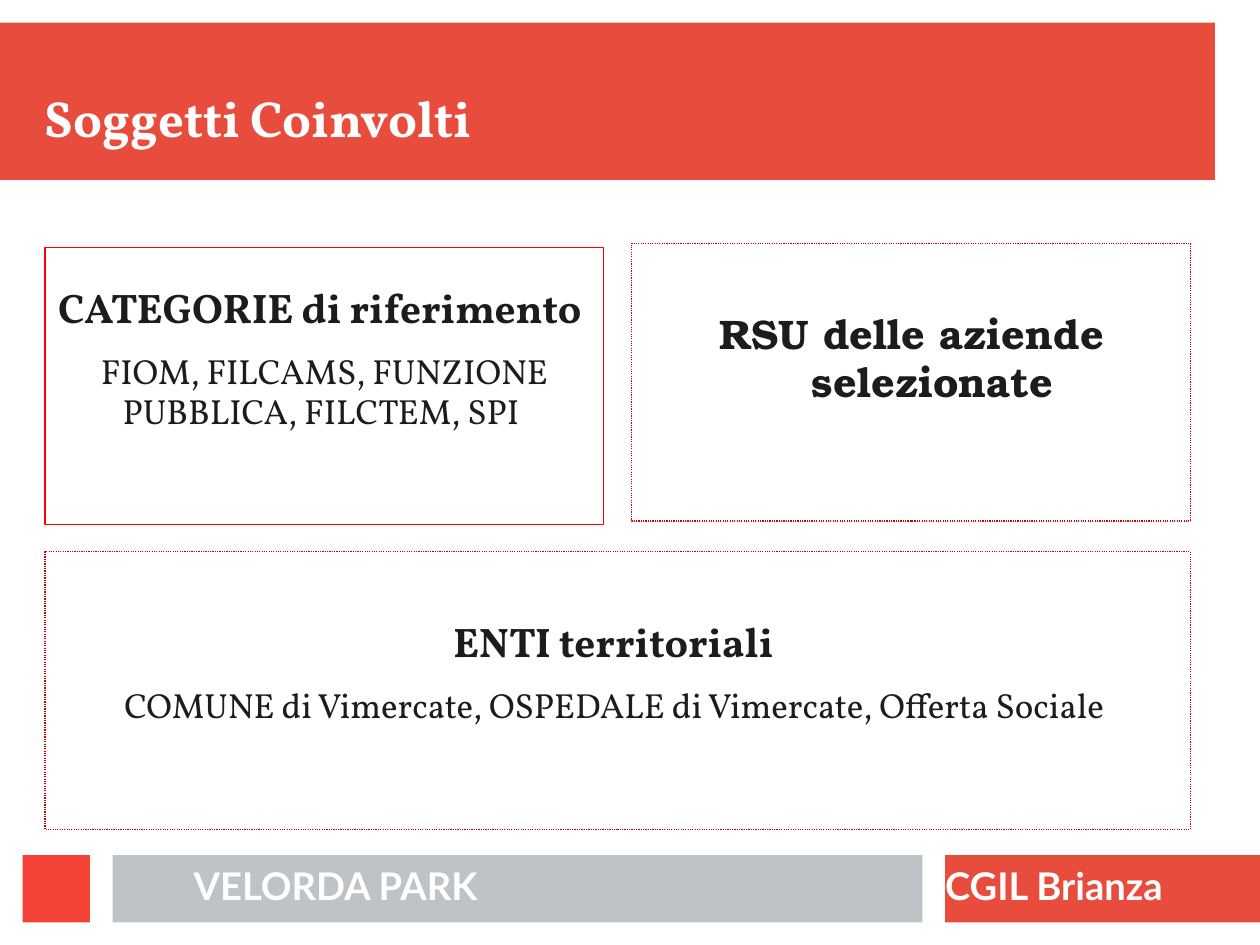
from pptx import Presentation
from pptx.dml.color import RGBColor
from pptx.enum.dml import MSO_LINE
from pptx.enum.shapes import MSO_SHAPE
from pptx.enum.text import MSO_ANCHOR as Anchor, PP_ALIGN as Align
from pptx.util import Pt

THEME = {
    "red": "E74C3C", "bright": "F44336", "grey": "BDC3C7",
    "white": "FFFFFF", "ink": "1C1C1C", "frame": "FF0000", "dots": "CC0000",
    "serif": "Vollkorn", "slab": "TeX Gyre Bonum", "sans": "Lato",
    "title": 32, "heading": 26, "body": 22, "footer": 24,
    "line": 0.75, "leading": 0.97, "after": 11.5,
}

PAGE_SIZE = (793.7, 595.3)
MARGIN = 28.35
BOX_WIDTH, BOX_HEIGHT = 352, 175
CONTENT_WIDTH = 721.5
FOOTER_TOP, FOOTER_HEIGHT = 538.6, 42.5

# left, top, width, height, colour
BANDS = [
    (0, 14.2, 765.4, 99.2, "red"),
    (595.3, FOOTER_TOP, 198.4, FOOTER_HEIGHT, "red"),
    (70.9, FOOTER_TOP, 510.2, FOOTER_HEIGHT, "grey"),
    (14.2, FOOTER_TOP, FOOTER_HEIGHT, FOOTER_HEIGHT, "bright"),
]

# area, text, font, size, alignment, anchor
LABELS = [
    ((MARGIN, 25.2, 735.8, 69.1), "Soggetti Coinvolti",
     "serif", "title", Align.LEFT, Anchor.BOTTOM),
    ((595.3, FOOTER_TOP, 182.2, 40.3), "CGIL Brianza",
     "sans", "footer", Align.LEFT, Anchor.MIDDLE),
    ((85, FOOTER_TOP, 252.7, 40.3), "VELORDA PARK",
     "sans", "footer", Align.CENTER, Anchor.MIDDLE),
]

SUBJECTS = [
    {"area": (MARGIN, 155.7, BOX_WIDTH, BOX_HEIGHT), "inset": 24,
     "line": "frame", "dotted": False, "font": "serif", "hanging": False,
     "heading": "CATEGORIE di riferimento ",
     "body": "FIOM, FILCAMS, FUNZIONE PUBBLICA, FILCTEM, SPI "},
    {"area": (MARGIN + CONTENT_WIDTH - BOX_WIDTH, 153.2, BOX_WIDTH, BOX_HEIGHT),
     "inset": 42.7,
     "line": "dots", "dotted": True, "font": "slab", "hanging": True,
     "heading": "RSU delle aziende selezionate"},
    {"area": (MARGIN, 347.6, CONTENT_WIDTH, BOX_HEIGHT), "inset": 42.7,
     "line": "dots", "dotted": True, "font": "serif", "hanging": False,
     "heading": "ENTI territoriali ",
     "body": "COMUNE di Vimercate, OSPEDALE di Vimercate, Offerta Sociale "},
]


def colour(name):
    return RGBColor.from_string(THEME[name])


def add_rectangle(page, area):
    box = page.shapes.add_shape(MSO_SHAPE.RECTANGLE, *map(Pt, area))
    box.shadow.inherit = False
    return box


def prepare_frame(shape, anchor, top=0):
    frame = shape.text_frame
    frame.word_wrap = True
    frame.vertical_anchor = anchor
    frame.margin_left = frame.margin_right = frame.margin_bottom = 0
    frame.margin_top = Pt(top)
    return frame


def write(para, text, font, size, ink, align, bold=True):
    para.alignment = align
    para.line_spacing = THEME["leading"]
    span = para.add_run()
    span.text = text
    span.font.name = THEME[font]
    span.font.size = Pt(THEME[size])
    span.font.bold = bold
    span.font.color.rgb = colour(ink)


def add_band(page, *area, fill):
    band = add_rectangle(page, area)
    band.fill.solid()
    band.fill.fore_color.rgb = colour(fill)
    band.line.fill.background()


def add_label(page, area, text, font, size, align, anchor):
    label = page.shapes.add_textbox(*map(Pt, area))
    frame = prepare_frame(label, anchor)
    write(frame.paragraphs[0], text, font, size, "white", align)


def add_subject(page, subject):
    box = add_rectangle(page, subject["area"])
    box.fill.background()
    box.line.color.rgb = colour(subject["line"])
    box.line.width = Pt(THEME["line"])
    if subject["dotted"]:
        box.line.dash_style = MSO_LINE.ROUND_DOT
    frame = prepare_frame(box, Anchor.TOP, subject["inset"])
    heading = frame.paragraphs[0]
    write(heading, subject["heading"], subject["font"], "heading", "ink", Align.CENTER)
    heading.space_after = Pt(THEME["after"])
    if subject["hanging"]:
        settings = heading._p.get_or_add_pPr()
        settings.set("marL", str(Pt(27.4)))
        settings.set("indent", str(Pt(-25.9)))
    if "body" in subject:
        body = frame.add_paragraph()
        write(body, subject["body"], subject["font"], "body", "ink",
              Align.CENTER, bold=False)
        body.space_after = Pt(THEME["after"])


def main():
    deck = Presentation()
    deck.slide_width, deck.slide_height = map(Pt, PAGE_SIZE)
    page = deck.slides.add_slide(deck.slide_layouts[6])
    for *area, fill in BANDS:
        add_band(page, *area, fill=fill)
    for label in LABELS:
        add_label(page, *label)
    for subject in SUBJECTS:
        add_subject(page, subject)
    deck.save("out.pptx")


if __name__ == "__main__":
    main()
